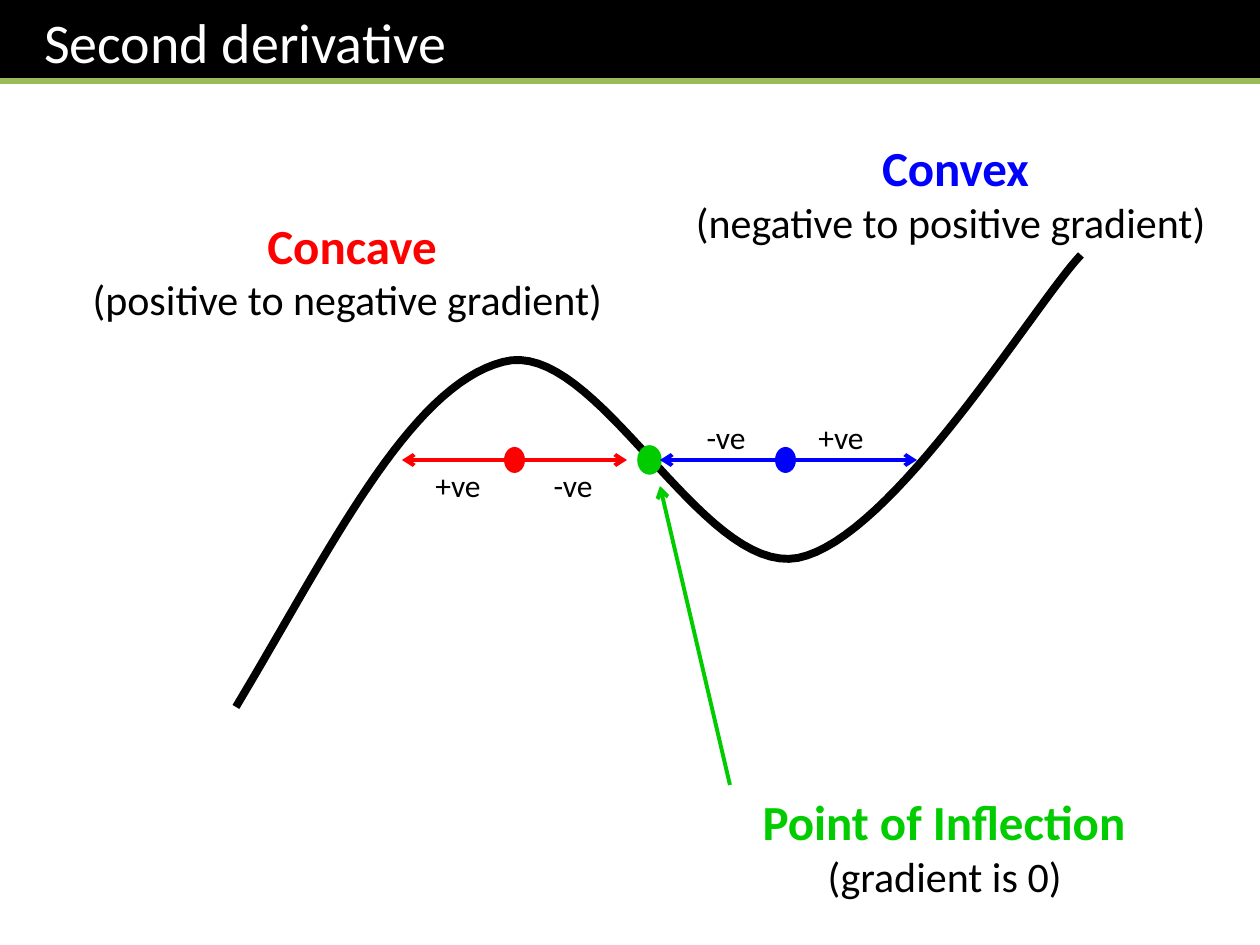
"""Build the slide on concave and convex parts of a curve."""
from dataclasses import dataclass

from lxml import etree
from pptx import Presentation, util as u
from pptx.dml.color import RGBColor
from pptx.enum import shapes, text
from pptx.oxml.ns import qn

SCALE = 914400 / 126
FONT = "Calibri"
BLACK = RGBColor(0, 0, 0)
WHITE = RGBColor(255, 255, 255)
RED = RGBColor(255, 0, 0)
GREEN = RGBColor(0, 204, 0)
BLUE = RGBColor(0, 0, 255)
OLIVE = RGBColor(0x9B, 0xBB, 0x59)


@dataclass
class Line:
    text: str
    size: int
    color: RGBColor = BLACK
    bold: bool = False


@dataclass
class Note:
    box: tuple[int, int, int, int]
    lines: list[Line]


@dataclass
class Dot:
    left: int
    color: RGBColor
    edge: int = 0


@dataclass
class Arrow:
    start: tuple[int, int]
    end: tuple[int, int]
    color: RGBColor
    ends: tuple[str, ...] = ("headEnd", "tailEnd")
    width: float = 2.25


def sign(left: int, top: int, word: str) -> Note:
    return Note((left, top, 92, 50), [Line(word, 18)])


def titled(box: tuple[int, int, int, int], head: str, color: RGBColor, body: str) -> Note:
    return Note(box, [Line(head, 28, color, True), Line(body, 24)])


NOTES = [
    titled((79, 209, 546, 123), "Concave", RED, "(positive to negative gradient) "),
    titled((703, 785, 493, 123), "Point of Inflection ", GREEN, "(gradient is 0) "),
    titled((639, 131, 633, 123), "Convex", BLUE, "(negative to positive gradient) "),
    sign(412, 460, "+ve"),
    sign(527, 460, "-ve"),
    sign(680, 412, "-ve"),
    sign(795, 412, "+ve"),
]
ARROWS = [
    Arrow((402, 460), (627, 460), RED),
    Arrow((660, 460), (917, 460), BLUE),
    Arrow((730, 785), (660, 486), GREEN, ("tailEnd",)),
]
START = Dot(639, GREEN, 2)
DOTS = [Dot(504, RED), Dot(775, BLUE)]
RULE = Arrow((0, 81), (1260, 81), OLIVE, (), 3)
CURVE = [
    (236, 707), (329, 552), (408, 387), (503, 362), (596, 336),
    (701, 576), (798, 558), (893, 539), (1034, 305), (1081, 255),
]
STEPS = 32


def px(*vals: float) -> list[u.Emu]:
    return [u.Emu(round(val * SCALE)) for val in vals]


def write(frame, lines: list[Line], align) -> None:
    frame.word_wrap = True
    frame.auto_size = text.MSO_AUTO_SIZE.SHAPE_TO_FIT_TEXT
    for i, line in enumerate(lines):
        para = frame.add_paragraph() if i else frame.paragraphs[0]
        para.text = line.text
        para.alignment = align
        font = para.font
        font.name, font.size, font.bold = FONT, u.Pt(line.size), line.bold
        font.color.rgb = line.color


def add_title(slide) -> None:
    bar = slide.shapes.add_shape(shapes.MSO_SHAPE.RECTANGLE, *px(0, 0, 1260, 83))
    bar.shadow.inherit = False
    bar.fill.solid()
    bar.fill.fore_color.rgb = BLACK
    bar.line.fill.background()
    bar.text_frame.margin_left = u.Inches(0.35)
    write(bar.text_frame, [Line("Second derivative", 32, WHITE)], text.PP_ALIGN.LEFT)


def add_note(slide, note: Note) -> None:
    box = slide.shapes.add_textbox(*px(*note.box))
    write(box.text_frame, note.lines, text.PP_ALIGN.CENTER)


def add_arrow(slide, arrow: Arrow) -> None:
    line = slide.shapes.add_connector(
        shapes.MSO_CONNECTOR.STRAIGHT, *px(*arrow.start, *arrow.end))
    line.line.color.rgb = arrow.color
    line.line.width = u.Pt(arrow.width)
    for end in arrow.ends:
        etree.SubElement(line.line._get_or_add_ln(), qn(f"a:{end}"), type="arrow")
    etree.SubElement(line._element.spPr, qn("a:effectLst"))


def add_dot(slide, dot: Dot) -> None:
    oval = slide.shapes.add_shape(shapes.MSO_SHAPE.OVAL, *px(dot.left, 447, 21, 26))
    oval.shadow.inherit = False
    oval.fill.solid()
    oval.fill.fore_color.rgb = dot.color
    if dot.edge:
        oval.line.color.rgb = dot.color
        oval.line.width = u.Pt(dot.edge)
    else:
        oval.line.fill.background()


def bezier(ends: list[tuple[int, int]], t: float) -> tuple[float, ...]:
    s = 1 - t
    parts = (s ** 3, 3 * s * s * t, 3 * s * t * t, t ** 3)
    return tuple(sum(p * v for p, v in zip(parts, axis)) for axis in zip(*ends))


def add_curve(slide) -> None:
    points = [
        px(*bezier(CURVE[i:i + 4], n / STEPS))
        for i in range(0, len(CURVE) - 1, 3)
        for n in range(1, STEPS + 1)
    ]
    pen = slide.shapes.build_freeform(*px(*CURVE[0]))
    pen.add_line_segments(points, close=False)
    curve = pen.convert_to_shape()
    curve.shadow.inherit = False
    curve.fill.background()
    curve.line.color.rgb = BLACK
    curve.line.width = u.Pt(4.5)


def main() -> None:
    deck = Presentation()
    deck.slide_width, deck.slide_height = px(1260, 945)
    slide = deck.slides.add_slide(deck.slide_layouts[6])
    add_title(slide)
    add_arrow(slide, RULE)
    for note in NOTES[:3]:
        add_note(slide, note)
    add_curve(slide)
    add_dot(slide, START)
    for arrow in ARROWS:
        add_arrow(slide, arrow)
    for dot in DOTS:
        add_dot(slide, dot)
    for note in NOTES[3:]:
        add_note(slide, note)
    deck.save("out.pptx")


if __name__ == "__main__":
    main()
